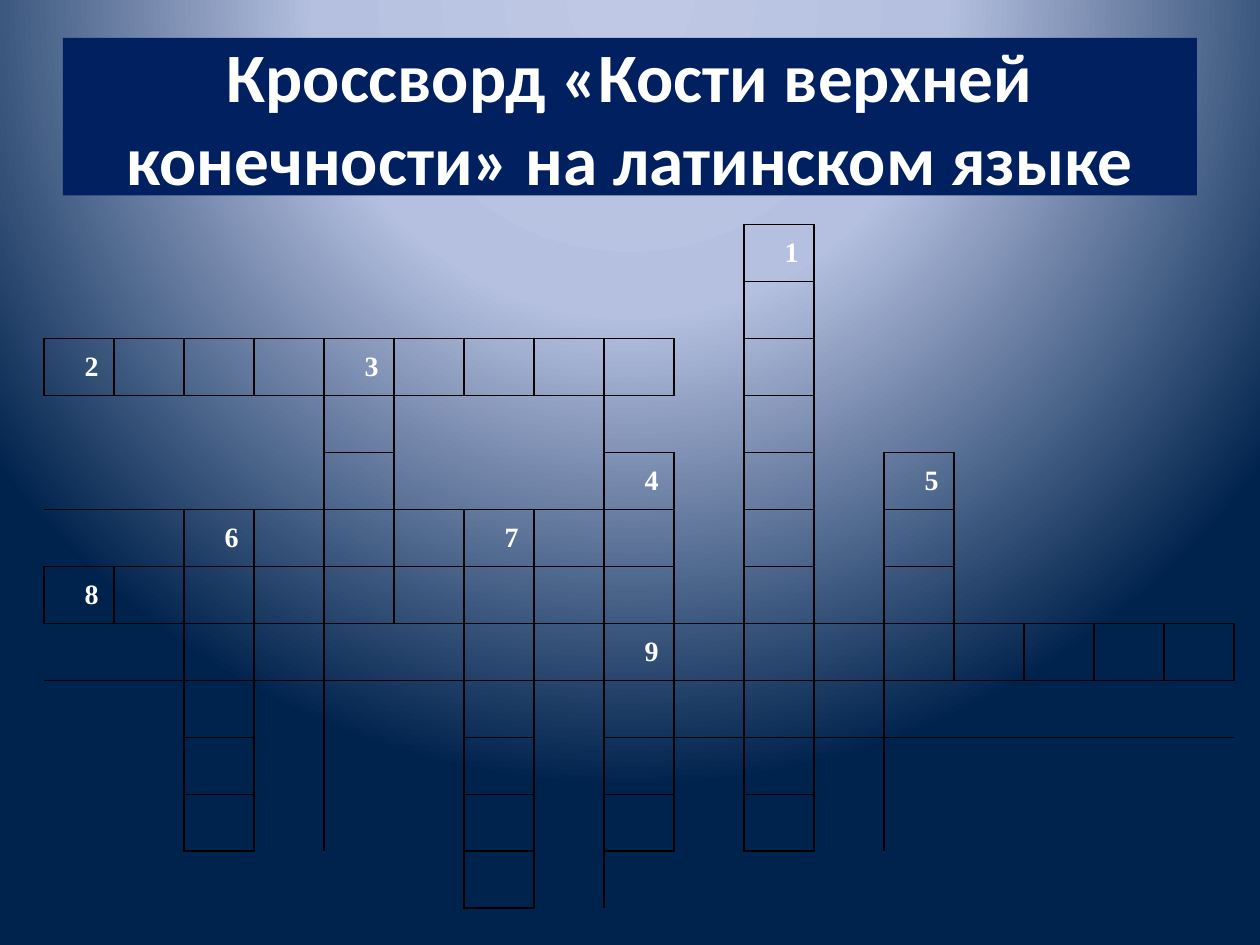
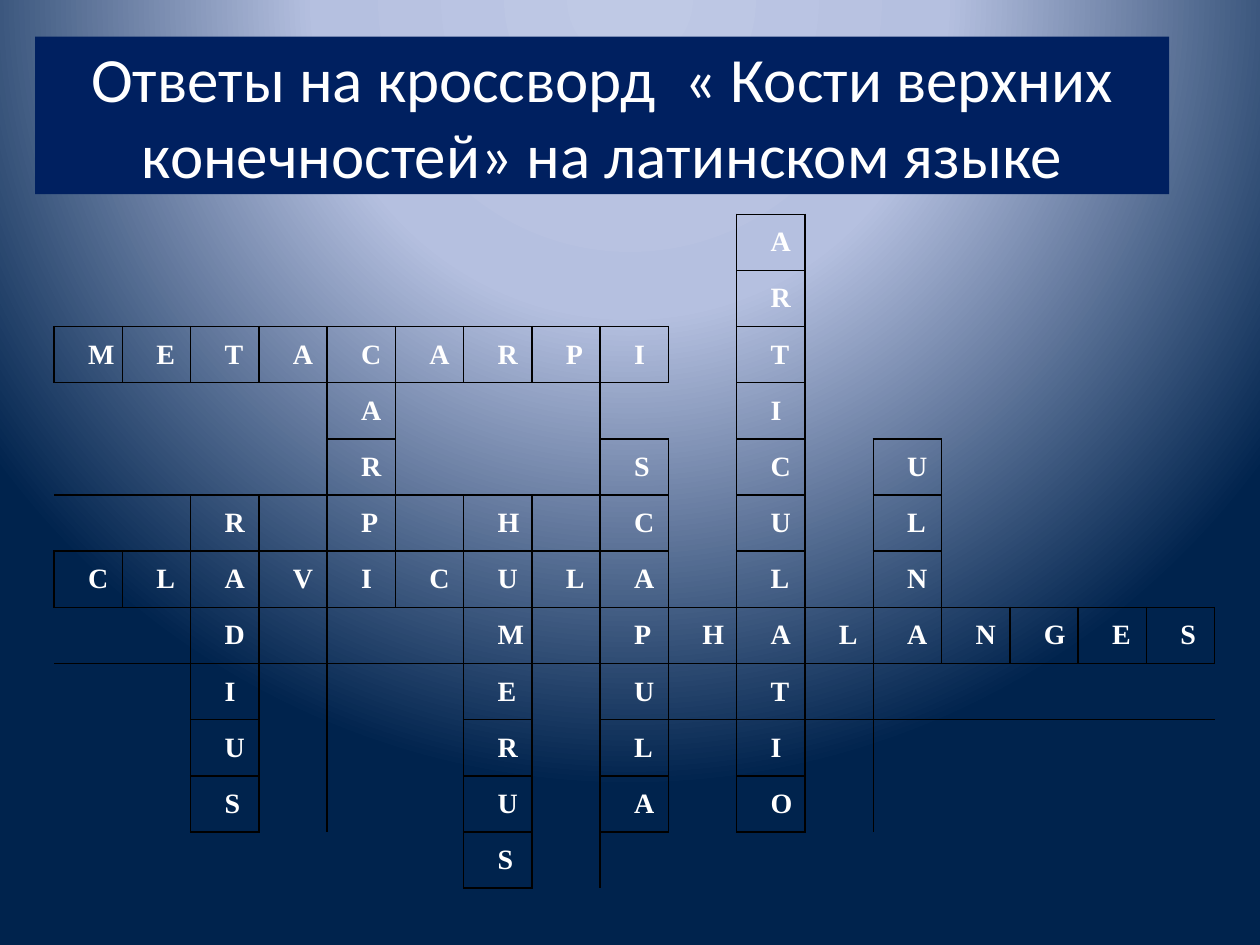
"""Build a crossword on the bones of the upper limb and its answer slide."""
from dataclasses import dataclass

from lxml import etree
from pptx import Presentation
from pptx.dml.color import RGBColor
from pptx.enum.shapes import MSO_SHAPE
from pptx.enum.text import MSO_ANCHOR, PP_ALIGN
from pptx.oxml.ns import qn
from pptx.util import Inches, Pt

RECTANGLE = MSO_SHAPE.RECTANGLE
MIDDLE = MSO_ANCHOR.MIDDLE
CENTER, LEFT = PP_ALIGN.CENTER, PP_ALIGN.LEFT


@dataclass(frozen=True)
class Theme:
    glow: tuple = ((0, "BFC9E5"), (40, "B5C0E0"), (100, "00234D"))
    band: RGBColor = RGBColor(0x00, 0x20, 0x60)
    text: RGBColor = RGBColor(0xFF, 0xFF, 0xFF)
    grid_line: str = "000000"
    grid_line_width: int = Pt(1)
    title_font: str = "Calibri"
    letter_font: str = "Times New Roman"
    letter_size: float = 16
    letter_indent: int = Inches(0.2)
    letter_margin: int = Inches(0.07)


THEME = Theme()
ROWS, COLUMNS = 12, 17
NO_STYLE = "{2D5ABB26-0587-4C30-8999-92F81FD0307C}"
DOWN, ACROSS = (1, 0), (0, 1)

ENTRIES = (
    ("ARTICULATIO", 0, 10, DOWN),
    ("METACARPI", 2, 0, ACROSS),
    ("CARPI", 2, 4, DOWN),
    ("SCAPULA", 4, 8, DOWN),
    ("ULNA", 4, 12, DOWN),
    ("RADIUS", 5, 2, DOWN),
    ("HUMERUS", 5, 6, DOWN),
    ("CLAVICULA", 6, 0, ACROSS),
    ("PHALANGES", 7, 8, ACROSS),
)
MERGED_GAPS = {(0, 11): (4, 6), (3, 0): (2, 4), (3, 5): (2, 3),
               (4, 11): (3, 1), (4, 13): (3, 4), (5, 0): (1, 2)}

letters, numbers = {}, {}
for number, (word, row, column, (row_step, column_step)) in enumerate(ENTRIES, 1):
    numbers[row, column] = str(number)
    for step, letter in enumerate(word):
        letters[row + step * row_step, column + step * column_step] = letter

PAGES = (
    {"title": "Кроссворд «Кости верхней конечности» на латинском языке",
     "title_at": (5, 4), "title_size": 39.6, "title_bold": True,
     "puzzle_at": (3.5, 23.73, 94.5, 72.4), "marks": numbers, "align": CENTER},
    {"title": "Ответы на кроссворд  « Кости верхних конечностей» на латинском языке",
     "title_at": (2.8, 3.87), "title_size": 36, "title_bold": False,
     "puzzle_at": (4.3, 22.67, 92.1, 71.33), "marks": letters, "align": LEFT},
)

deck = Presentation()
deck.slide_width, deck.slide_height = Inches(10), Inches(7.5)


def area(left, top, width, height):
    """Turn percentages of the slide into lengths."""
    sides = (deck.slide_width, deck.slide_height) * 2
    return [int(side * share / 100) for side, share in zip(sides, (left, top, width, height))]


def write(frame, text, align, font, size, bold):
    """Put one formatted line of text into a frame and return its paragraph."""
    paragraph = frame.paragraphs[0]
    paragraph.alignment = align
    run = paragraph.add_run()
    run.text = text
    for key, value in {"name": font, "size": Pt(size), "bold": bold}.items():
        setattr(run.font, key, value)
    run.font.color.rgb = THEME.text
    return paragraph


for page in PAGES:
    slide = deck.slides.add_slide(deck.slide_layouts[6])

    slide.background.fill.solid()
    plain = slide.element.find(".//" + qn("a:solidFill"))
    glow = etree.Element(qn("a:gradFill"), rotWithShape="1")
    stops = etree.SubElement(glow, qn("a:gsLst"))
    for position, colour in THEME.glow:
        stop = etree.SubElement(stops, qn("a:gs"), pos=str(position * 1000))
        etree.SubElement(stop, qn("a:srgbClr"), val=colour)
    circle = etree.SubElement(glow, qn("a:path"), path="circle")
    etree.SubElement(circle, qn("a:fillToRect"), l="50000", t="-80000", r="50000", b="180000")
    plain.getparent().replace(plain, glow)

    heading = slide.shapes.add_shape(RECTANGLE, *area(*page["title_at"], 90, 16.67))
    heading.shadow.inherit = False
    heading.fill.solid()
    heading.fill.fore_color.rgb = THEME.band
    heading.line.fill.background()
    heading.text_frame.word_wrap = True
    heading.text_frame.vertical_anchor = MIDDLE
    write(heading.text_frame, page["title"], CENTER, THEME.title_font,
          page["title_size"], page["title_bold"])

    puzzle = slide.shapes.add_table(ROWS, COLUMNS, *area(*page["puzzle_at"])).table
    puzzle.first_row = puzzle.horz_banding = False
    slide.element.find(".//" + qn("a:tableStyleId")).text = NO_STYLE
    for (row, column), (height, width) in MERGED_GAPS.items():
        puzzle.cell(row, column).merge(puzzle.cell(row + height - 1, column + width - 1))

    for row in range(ROWS):
        for column in range(COLUMNS):
            square = puzzle.cell(row, column)
            if square.is_spanned:
                continue
            height, width = MERGED_GAPS.get((row, column), (1, 1))
            down, along = range(row, row + height), range(column, column + width)
            neighbours = {
                "a:lnL": [(r, column - 1) for r in down],
                "a:lnR": [(r, column + width) for r in down],
                "a:lnT": [(row - 1, c) for c in along],
                "a:lnB": [(row + height, c) for c in along],
            }
            margins = {"margin_left": THEME.letter_margin, "margin_right": THEME.letter_margin,
                       "margin_top": 0, "margin_bottom": 0, "vertical_anchor": MIDDLE}
            for key, value in margins.items():
                setattr(square, key, value)
            properties = square._tc.get_or_add_tcPr()
            for side, beyond in neighbours.items():
                if (row, column) in letters or all(place in letters for place in beyond):
                    edge = etree.SubElement(properties, qn(side), w=str(THEME.grid_line_width))
                    ink = etree.SubElement(edge, qn("a:solidFill"))
                    etree.SubElement(ink, qn("a:srgbClr"), val=THEME.grid_line)
            square.fill.background()
            if (row, column) in page["marks"]:
                mark = write(square.text_frame, page["marks"][row, column], page["align"],
                             THEME.letter_font, THEME.letter_size, True)
                mark._p.get_or_add_pPr().set("indent", str(THEME.letter_indent))

deck.save("out.pptx")
